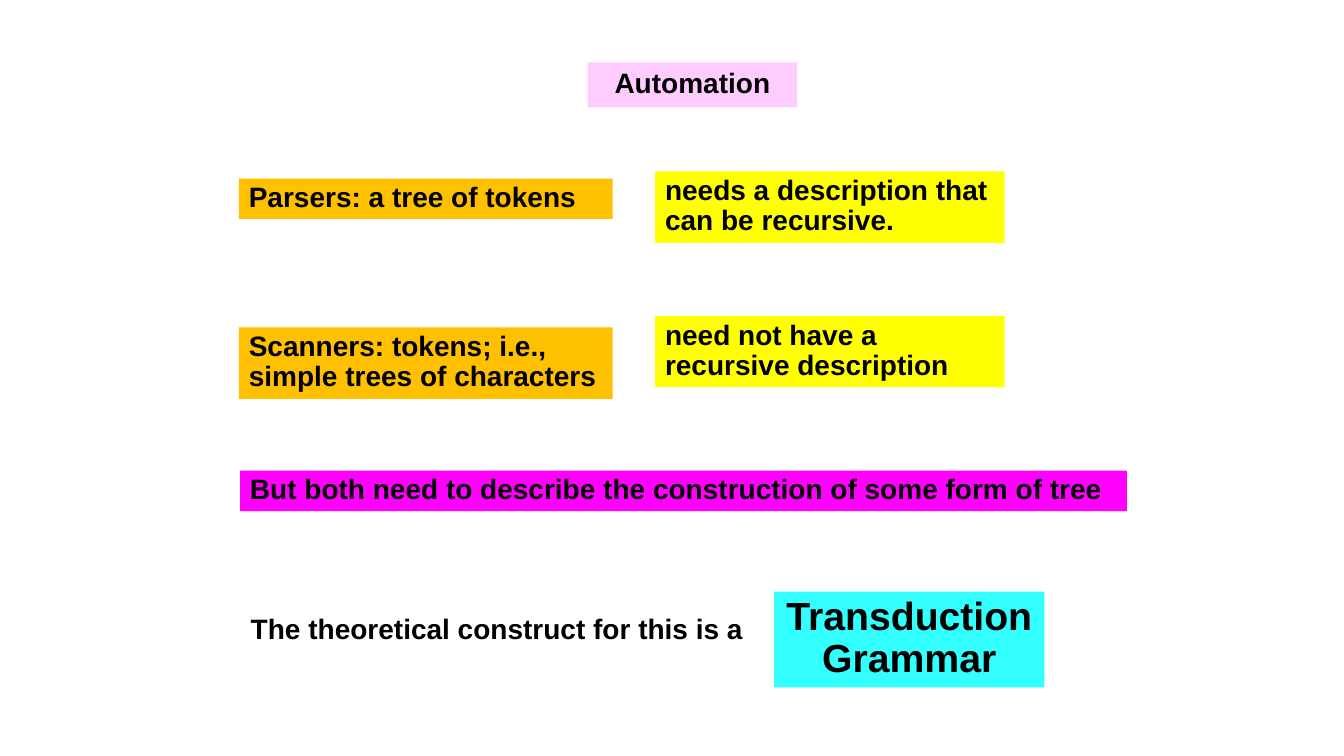
from pptx import Presentation
from pptx.dml.color import RGBColor
from pptx.enum.shapes import MSO_SHAPE
from pptx.enum.text import MSO_ANCHOR, PP_ALIGN
from pptx.util import Cm, Pt

RECT = MSO_SHAPE.RECTANGLE
LEFT, CENTER = PP_ALIGN.LEFT, PP_ALIGN.CENTER
TOP, MIDDLE = MSO_ANCHOR.TOP, MSO_ANCHOR.MIDDLE

PINK, ORANGE, YELLOW = "FFCCFF", "FFC000", "FFFF00"
MAGENTA, CYAN, BLACK = "FF00FF", "33FFFF", "000000"

ONE, TWO = 1.02, 1.8  # box heights for one and two lines of text
PHASE = {"left": 6.02, "width": 9.42, "fill": ORANGE}
NEED = {"left": 16.51, "width": 8.81, "fill": YELLOW}
BASE = {"height": ONE, "fill": None, "size": 20, "align": LEFT, "anchor": TOP}

BOXES = [
    {"text": "Automation", "left": 14.81, "top": 1.57, "width": 5.28,
     "height": 1.14, "fill": PINK, "align": CENTER, "anchor": MIDDLE},
    {"text": "Parsers: a tree of tokens", "top": 4.5, **PHASE},
    {"text": "Scanners: tokens; i.e., simple trees of characters",
     "top": 8.25, "height": TWO, **PHASE},
    {"text": "needs a description that can be recursive.",
     "top": 4.32, "height": TWO, **NEED},
    {"text": "need not have a recursive description",
     "top": 7.96, "height": TWO, **NEED},
    {"text": "But both need to describe the construction of some form of tree",
     "left": 6.05, "top": 11.86, "width": 22.35, "fill": MAGENTA},
    {"text": "The theoretical construct for this is a",
     "left": 6.07, "top": 15.37, "width": 13.44},
    {"text": "Transduction Grammar", "left": 19.51, "top": 14.91, "width": 6.81,
     "height": 2.41, "fill": CYAN, "size": 28, "align": CENTER},
]


def paint(color, code):
    color.rgb = RGBColor.from_string(code)


def add_box(slide, box):
    place = [Cm(box[key]) for key in ("left", "top", "width", "height")]
    if box["fill"]:
        shape = slide.shapes.add_shape(RECT, *place)
        shape.shadow.inherit = False
        shape.fill.solid()
        paint(shape.fill.fore_color, box["fill"])
        shape.line.fill.background()
    else:
        shape = slide.shapes.add_textbox(*place)
    frame = shape.text_frame
    frame.word_wrap = True
    frame.vertical_anchor = box["anchor"]
    para = frame.paragraphs[0]
    para.alignment = box["align"]
    para.line_spacing = 0.9
    run = para.add_run()
    run.text = box["text"]
    style = {"name": "Arial", "size": Pt(box["size"]), "bold": True}
    for key, value in style.items():
        setattr(run.font, key, value)
    paint(run.font.color, BLACK)


def main():
    deck = Presentation()
    deck.slide_width, deck.slide_height = Cm(33.87), Cm(19.05)
    slide = deck.slides.add_slide(deck.slide_layouts[6])
    for box in BOXES:
        add_box(slide, {**BASE, **box})
    deck.save("out.pptx")


if __name__ == "__main__":
    main()
